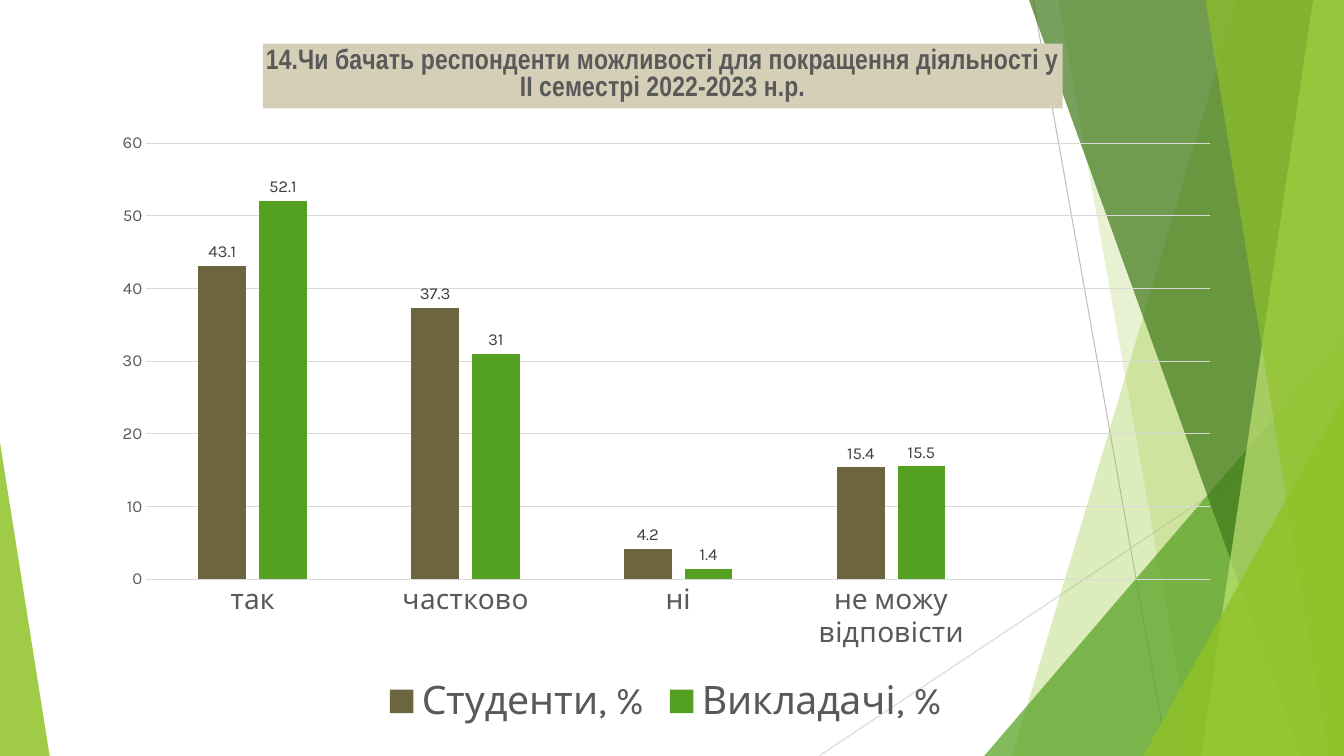
"""Build a slide with a clustered column chart of survey answers over a green facet backdrop."""
from lxml import etree
from pptx import Presentation
from pptx.chart.data import CategoryChartData
from pptx.dml.color import RGBColor
from pptx.enum.chart import XL_CHART_TYPE, XL_LABEL_POSITION, XL_LEGEND_POSITION, XL_TICK_MARK
from pptx.enum.shapes import MSO_CONNECTOR, MSO_SHAPE
from pptx.enum.text import PP_ALIGN
from pptx.oxml.ns import qn
from pptx.util import Pt

COLUMNS = XL_CHART_TYPE.COLUMN_CLUSTERED
OUTSIDE_END = XL_LABEL_POSITION.OUTSIDE_END
BOTTOM = XL_LEGEND_POSITION.BOTTOM
NO_TICK = XL_TICK_MARK.NONE
STRAIGHT = MSO_CONNECTOR.STRAIGHT
TRIANGLE = MSO_SHAPE.ISOSCELES_TRIANGLE
CENTER = PP_ALIGN.CENTER

COLORS = {
    "lime": "90C226", "green": "54A021", "forest": "3F7819", "pale": "C0E474",
    "olive": "6D6540", "sand": "D6CFB8", "text": "595959", "label": "404040",
    "grid": "D9D9D9", "ray": "BFBFBF", "black": "000000",
}
WIDTH, HEIGHT = 960, 540


def color(name):
    return RGBColor.from_string(COLORS[name])


def place(element, **fractions):
    layout = element.find(qn("c:layout"))
    if layout is None:
        layout = etree.Element(qn("c:layout"))
        element.insert(0, layout)
    manual = etree.SubElement(layout, qn("c:manualLayout"))
    for tag, value in fractions.items():
        etree.SubElement(manual, qn(f"c:{tag}")).set("val", str(value))


prs = Presentation()
prs.slide_width, prs.slide_height = Pt(WIDTH), Pt(HEIGHT)
slide = prs.slides.add_slide(prs.slide_layouts[6])
shapes = slide.shapes

rays = [(738, 0, 834, HEIGHT, "ray"), (WIDTH, 290, 585, HEIGHT, "grid")]
for x1, y1, x2, y2, tone in rays:
    ray = shapes.add_connector(STRAIGHT, Pt(x1), Pt(y1), Pt(x2), Pt(y2))
    ray.line.color.rgb = color(tone)
    ray.line.width = Pt(0.75)
    etree.SubElement(ray._element.spPr, qn("a:effectLst"))

bands = [
    (884, 723, "lime", 30), (756, 852, "lime", 20), (703, 240, "green", 72),
    (735, 929.5, "forest", 70), (938, 858, "pale", 70), (861, 949, "lime", 65),
    (816.5, 283, "lime", 80), (0, 316, "lime", 85),
]
corners = {703: (257, 1), 816.5: (143.5, 1), 0: (35.5, 0)}
for left, second, tone, opacity in bands:
    if left in corners:
        width, apex = corners[left]
        facet = shapes.add_shape(TRIANGLE, Pt(left), Pt(second), Pt(width), Pt(HEIGHT - second))
        facet.adjustments[0] = apex
    else:
        outline = shapes.build_freeform(Pt(left), 0)
        outline.add_line_segments(
            [(Pt(WIDTH), 0), (Pt(WIDTH), Pt(HEIGHT)), (Pt(second), Pt(HEIGHT))], close=True)
        facet = outline.convert_to_shape()
    facet.shadow.inherit = False
    facet.line.fill.background()
    facet.fill.solid()
    facet.fill.fore_color.rgb = color(tone)
    tint = facet._element.spPr.find(qn("a:solidFill"))[0]
    etree.SubElement(tint, qn("a:alpha")).set("val", str(opacity * 1000))

answers = CategoryChartData()
answers.categories = ["так", "частково", "ні", "не можу відповісти", ""]
answers.add_series("Студенти, %", [43.1, 37.3, 4.2, 15.4, None])
answers.add_series("Викладачі, %", [52.1, 31, 1.4, 15.5, None])
chart = shapes.add_chart(COLUMNS, Pt(71.3), Pt(25.2), Pt(808.6), Pt(497.5), answers).chart

chart.has_title = True
heading = chart.chart_title
heading.include_in_layout = False
heading.format.fill.solid()
heading.format.fill.fore_color.rgb = color("sand")
heading_text = heading.text_frame
heading_text.text = ("14.Чи бачать респонденти можливості для покращення діяльності у\n"
                     "ІІ семестрі 2022-2023 н.р.")

chart.has_legend = True
legend = chart.legend
legend.position = BOTTOM
legend.include_in_layout = False

answer_axis, percent_axis = chart.category_axis, chart.value_axis
for axis in (answer_axis, percent_axis):
    axis.major_tick_mark = axis.minor_tick_mark = NO_TICK
percent_axis.minimum_scale, percent_axis.maximum_scale, percent_axis.major_unit = 0, 60, 10
percent_axis.has_major_gridlines = True
percent_axis.format.line.fill.background()
for line in (answer_axis.format.line, percent_axis.major_gridlines.format.line):
    line.color.rgb = color("grid")
    line.width = Pt(0.75)

plot = chart.plots[0]
plot.gap_width, plot.overlap = 219, -27
plot.vary_by_categories = False
fonts = [
    (chart.font, "black", {"size": Pt(10), "name": "Karla"}),
    (answer_axis.tick_labels.font, "text", {"size": Pt(20), "name": "Karla"}),
    (percent_axis.tick_labels.font, "text", {"size": Pt(12), "name": "Karla"}),
    (legend.font, "text", {"size": Pt(28), "name": "Karla"}),
]
for group, tone in zip(plot.series, ("olive", "green")):
    group.format.fill.solid()
    group.format.fill.fore_color.rgb = color(tone)
    labels = group.data_labels
    labels.show_value = True
    labels.position = OUTSIDE_END
    fonts.append((labels.font, "label", {"size": Pt(12), "name": "Karla"}))
for paragraph in heading_text.paragraphs:
    paragraph.alignment = CENTER
    for font in (paragraph.font, paragraph.runs[0].font):
        fonts.append((font, "text", {"size": Pt(20), "name": "Arial Narrow", "bold": True}))
for font, tone, values in fonts:
    font.color.rgb = color(tone)
    for attribute, value in values.items():
        setattr(font, attribute, value)

chart_root = chart._chartSpace.find(qn("c:chart"))
place(chart_root.find(qn("c:title")), xMode="edge", yMode="edge", x=0.144, y=0.012)
place(chart_root.find(qn("c:plotArea")), layoutTarget="inner", xMode="edge", yMode="edge",
      x=0.041, y=0.155, w=0.94, h=0.626)

prs.save("out.pptx")
